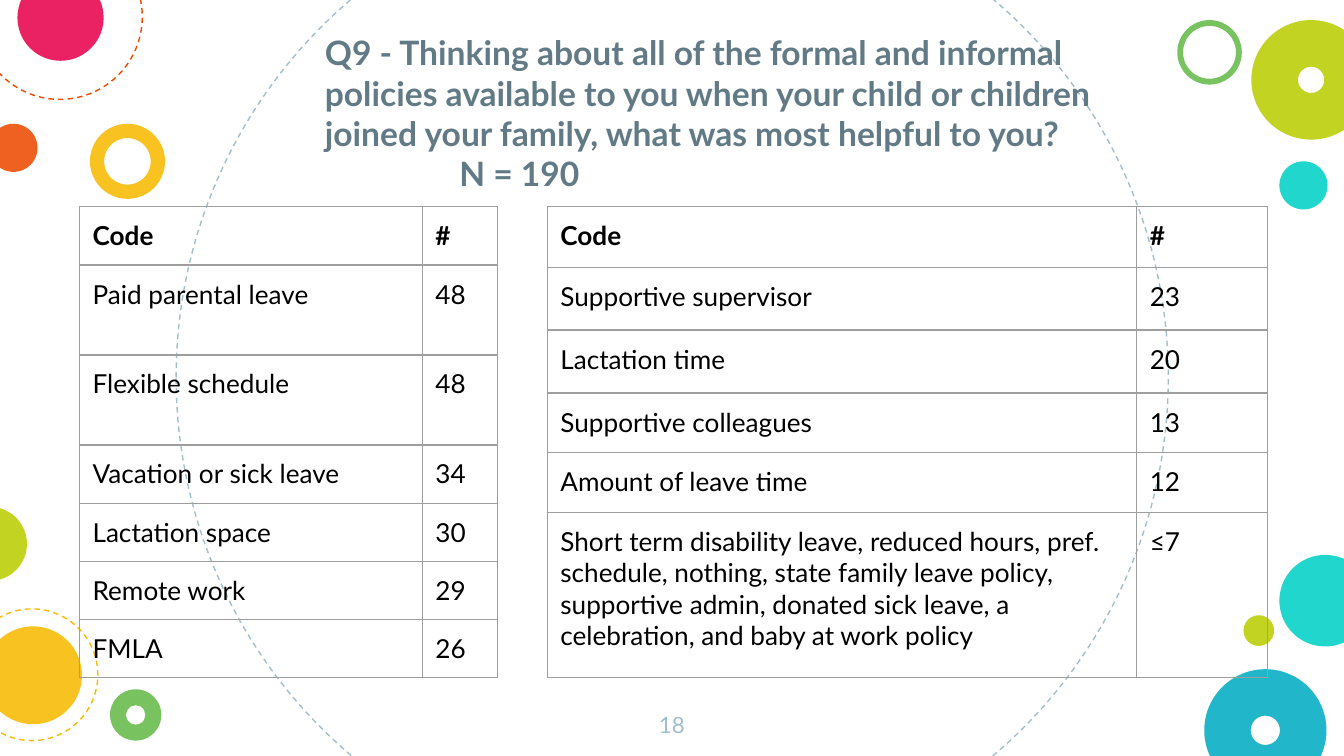
from lxml.etree import SubElement
from pptx import Presentation
from pptx.dml.color import RGBColor
from pptx.enum.dml import MSO_LINE
from pptx.enum.shapes import MSO_SHAPE
from pptx.enum.text import MSO_ANCHOR as Anchor, PP_ALIGN as Align
from pptx.oxml.ns import qn
from pptx.util import Cm, Pt

BLACK = RGBColor(0x00, 0x00, 0x00)
SLATE = RGBColor(0x61, 0x7A, 0x86)
PALE_BLUE = RGBColor(0xA1, 0xBE, 0xCC)
TURQUOISE = RGBColor(0x00, 0xD1, 0xC6)
TEAL = RGBColor(0x00, 0xAC, 0xC3)
YELLOW = RGBColor(0xF8, 0xBB, 0x00)
LIME = RGBColor(0xBB, 0xCD, 0x00)
GREEN = RGBColor(0x65, 0xBB, 0x48)
ORANGE = RGBColor(0xED, 0x4A, 0x00)
PINK = RGBColor(0xE8, 0x00, 0x4C)
GREY = RGBColor(0x9E, 0x9E, 0x9E)


class SlideBuilder:
    font_name = "Lato"
    inset = Cm(0.25)
    line_width = Pt(0.75)
    opacity = 87

    def __init__(self, slide):
        self.slide = slide

    def style(self, paragraph, size, color, bold=False):
        font = paragraph.font
        font.name, font.size, font.bold = self.font_name, Pt(size), bold
        font.color.rgb = color

    def set_insets(self, holder):
        holder.margin_left = holder.margin_right = self.inset
        holder.margin_top = holder.margin_bottom = self.inset

    def circle(self, left, top, size, kind=MSO_SHAPE.OVAL):
        shape = self.slide.shapes.add_shape(kind, Cm(left), Cm(top), Cm(size), Cm(size))
        shape.shadow.inherit = False
        return shape

    def dashed_ring(self, left, top, size, color):
        shape = self.circle(left, top, size)
        shape.fill.background()
        shape.line.color.rgb = color
        shape.line.width = self.line_width
        shape.line.dash_style = MSO_LINE.DASH

    def dot(self, left, top, size, color, thickness=None):
        """A filled disc, or a donut when a ring thickness is given."""
        shape = self.circle(left, top, size, MSO_SHAPE.DONUT if thickness else MSO_SHAPE.OVAL)
        if thickness:
            shape.adjustments[0] = thickness
        shape.line.fill.background()
        shape.fill.solid()
        shape.fill.fore_color.rgb = color
        color_element = shape.fill._xPr.find(qn("a:solidFill"))[0]
        SubElement(color_element, qn("a:alpha"), val=str(self.opacity * 1000))

    def title(self, left, top, width, height, question, count, count_indent):
        shape = self.slide.shapes.title
        shape.left, shape.top, shape.width, shape.height = map(Cm, (left, top, width, height))
        self.slide.shapes._spTree.append(shape._element)  # in front of the circles
        frame = shape.text_frame
        self.set_insets(frame)
        frame.word_wrap = True
        frame.vertical_anchor = Anchor.BOTTOM
        frame.text = f"{question}\n{count}"
        for paragraph in frame.paragraphs:
            paragraph.alignment = Align.LEFT
            paragraph.space_before = Pt(0)
            self.style(paragraph, 18, SLATE, bold=True)
        frame.paragraphs[1]._p.get_or_add_pPr().set("marL", str(Cm(count_indent)))

    def page_number(self, left, top, width, height, text):
        frame = self.slide.shapes.add_textbox(*map(Cm, (left, top, width, height))).text_frame
        frame.word_wrap = True
        self.set_insets(frame)
        paragraph = frame.paragraphs[0]
        paragraph.text = text
        paragraph.alignment = Align.CENTER
        self.style(paragraph, 12, PALE_BLUE)

    def border(self, cell):
        properties = cell._tc.get_or_add_tcPr()
        for side in ("lnL", "lnR", "lnT", "lnB"):
            line = SubElement(properties, qn(f"a:{side}"), w=str(self.line_width))
            fill = SubElement(line, qn("a:solidFill"))
            SubElement(fill, qn("a:srgbClr"), val=str(GREY))

    def table(self, left, top, widths, heights, rows):
        """Code and count table; spare heights extend the last row by merging."""
        table = self.slide.shapes.add_table(
            len(heights), len(widths), Cm(left), Cm(top),
            Cm(sum(widths)), Cm(sum(heights))).table
        table.first_row = table.horz_banding = False
        for column, width in zip(table.columns, widths):
            column.width = Cm(width)
        for row, height in zip(table.rows, heights):
            row.height = Cm(height)
        for r in range(len(heights)):
            for c in range(len(widths)):
                cell = table.cell(r, c)
                self.set_insets(cell)
                self.border(cell)
                cell.fill.background()
                paragraph = cell.text_frame.paragraphs[0]
                if r < len(rows):
                    paragraph.text = rows[r][c]
                self.style(paragraph, 14, BLACK, bold=r == 0)
        if len(heights) > len(rows):
            for c in range(len(widths)):
                table.cell(len(rows) - 1, c).merge(table.cell(len(heights) - 1, c))


HEADER = ("Code", "#")
MAIN_CODES = [
    HEADER,
    ("Paid parental leave", "48"),
    ("Flexible schedule", "48"),
    ("Vacation or sick leave", "34"),
    ("Lactation space", "30"),
    ("Remote work", "29"),
    ("FMLA", "26"),
]
OTHER_CODES = [
    HEADER,
    ("Supportive supervisor", "23"),
    ("Lactation time", "20"),
    ("Supportive colleagues", "13"),
    ("Amount of leave time", "12"),
    ("Short term disability leave, reduced hours, pref. schedule, nothing, "
     "state family leave policy, supportive admin, donated sick leave, "
     "a celebration, and baby at work policy", "≤7"),
]
RINGS = [
    (3.33, -2.24, 18.75, PALE_BLUE),
    (-0.43, -1.24, 3.12, ORANGE),
    (-0.64, 11.51, 2.49, YELLOW),
]
DOTS = [
    # Right edge
    (24.18, 10.49, 1.73, TURQUOISE),
    (22.76, 12.65, 2.31, TEAL, 0.38),
    (23.5, 11.63, 0.58, LIME),
    (22.25, 0.38, 1.22, GREEN, 0.09),
    (23.65, 0.38, 2.26, LIME, 0.39),
    (24.18, 3.05, 0.91, TURQUOISE),
    # Left edge
    (1.7, 2.34, 1.42, YELLOW, 0.19),
    (-0.2, 2.34, 0.91, ORANGE),
    (0.33, -0.48, 1.63, PINK),
    (2.08, 13.03, 0.97, GREEN, 0.31),
    (-0.3, 11.84, 1.85, YELLOW),
    (-0.89, 9.58, 1.4, LIME),
]


def main():
    presentation = Presentation()
    presentation.slide_width, presentation.slide_height = Cm(25.4), Cm(14.29)
    title_only = presentation.slide_layouts[5]
    builder = SlideBuilder(presentation.slides.add_slide(title_only))

    # Decorative circles
    for ring in RINGS:
        builder.dashed_ring(*ring)
    for dot in DOTS:
        builder.dot(*dot)

    # Title and page number
    builder.title(
        5.89, 0.56, 16.23, 3.35,
        "Q9 - Thinking about all of the formal and informal policies available to you "
        "when your child or children joined your family, what was most helpful to you?",
        "N = 190", count_indent=2.54)
    builder.page_number(12.05, 13.2, 1.3, 1.09, "18")

    # Tables
    table_top = 3.91
    builder.table(1.5, table_top, (6.48, 1.42),
                  (1.1, 1.7, 1.7, 1.1, 1.1, 1.1, 1.1), MAIN_CODES)
    builder.table(10.34, table_top, (11.14, 2.47),
                  (1.14, 1.19, 1.19, 1.13, 1.13, 0.74, 2.38), OTHER_CODES)

    presentation.save("out.pptx")


if __name__ == "__main__":
    main()
